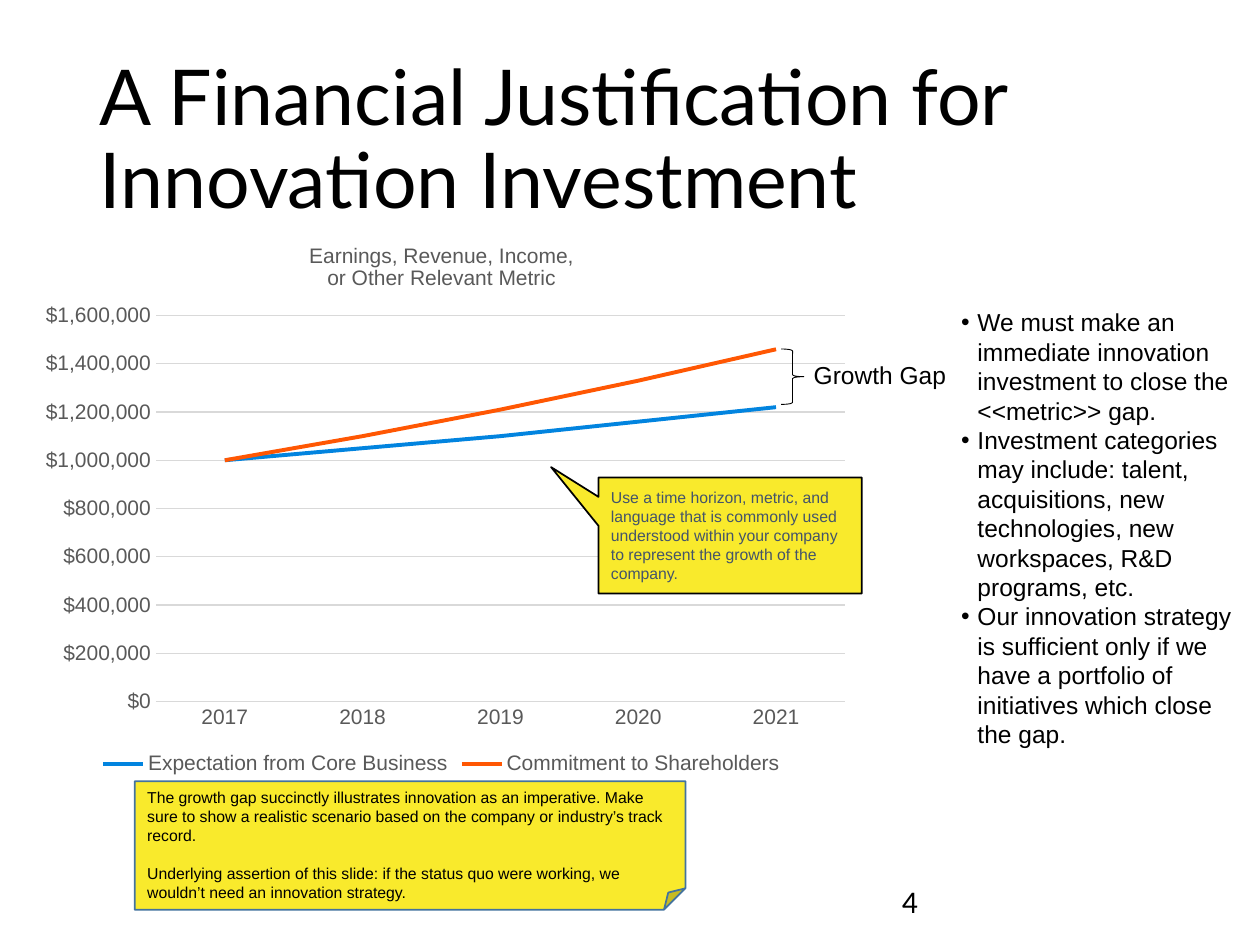
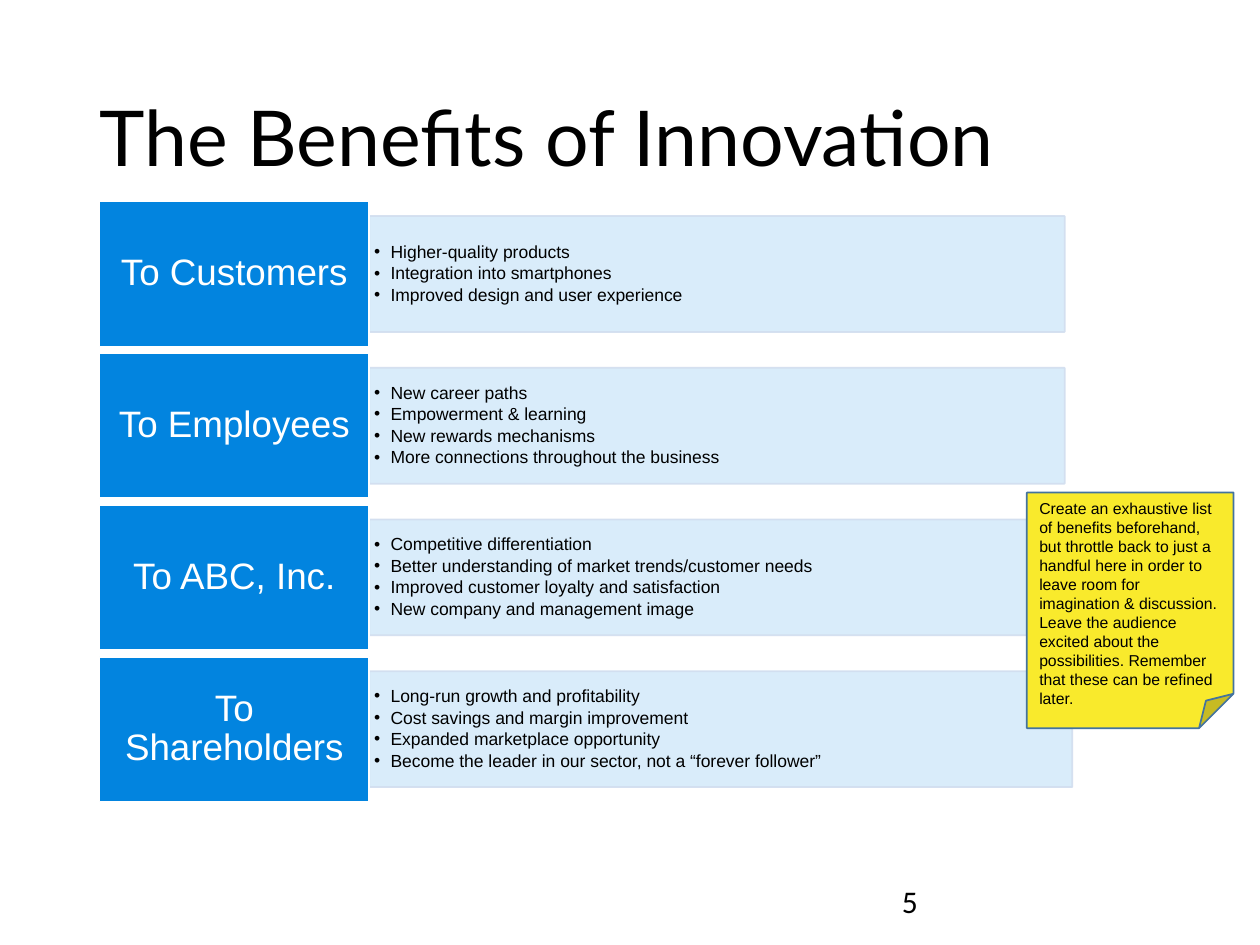
"""Builds two slides on the financial case for innovation and its benefits."""
from lxml.etree import SubElement
from pptx import Presentation
from pptx.chart.data import CategoryChartData
from pptx.dml.color import RGBColor
from pptx.enum.chart import XL_CHART_TYPE as Chart, XL_LEGEND_POSITION as Legend, XL_TICK_MARK as Tick
from pptx.enum.shapes import MSO_SHAPE as Shape
from pptx.enum.text import MSO_ANCHOR as Anchor, MSO_AUTO_SIZE as Fit, PP_ALIGN as Align
from pptx.oxml.ns import qn
from pptx.util import Inches, Pt

WIDTH, HEIGHT = 10, 7.5
BLUE, ORANGE, YELLOW = "0284DF", "FF5703", "F9EA2C"
BLACK, WHITE, GREY, SLATE = "000000", "FFFFFF", "595959", "44546A"
GRID, NOTE_EDGE, DETAIL_EDGE = "D9D9D9", "43739E", "D2DEEF"

TITLE_AREA = (0.69, 0.4, 8.62, 1.45)
NUMBER_AREA = (7.06, 6.95, 2.25, 0.4)
BULLET_INDENT = 0.13

GROWTH = {
    "title": "A Financial Justification for Innovation Investment",
    "number": "4",
    "metric": ["Earnings, Revenue, Income,", "or Other Relevant Metric"],
    "years": ["2017", "2018", "2019", "2020", "2021"],
    "series": [
        ("Expectation from Core Business", BLUE, [1000000, 1050000, 1100000, 1160000, 1220000]),
        ("Commitment to Shareholders", ORANGE, [1000000, 1100000, 1210000, 1330000, 1460000]),
    ],
    "gap": "Growth Gap",
    "actions": [
        "We must make an immediate innovation investment to close the <<metric>> gap.",
        "Investment categories may include: talent, acquisitions, new technologies, "
        "new workspaces, R&D programs, etc.",
        "Our innovation strategy is sufficient only if we have a portfolio of "
        "initiatives which close the gap.",
    ],
    "callout": "Use a time horizon, metric, and language that is commonly used understood "
               "within your company to represent the growth of the company.",
    "note": [
        "The growth gap succinctly illustrates innovation as an imperative. Make sure to show "
        "a realistic scenario based on the company or industry’s track record.",
        "Underlying assertion of this slide: if the status quo were working, "
        "we wouldn’t need an innovation strategy.",
    ],
}

BENEFITS = {
    "title": "The Benefits of Innovation",
    "number": "5",
    "groups": [
        ("To Customers", 5.52, ["Higher-quality products", "Integration into smartphones",
                                "Improved design and user experience"]),
        ("To Employees", 5.52, ["New career paths", "Empowerment & learning",
                                "New rewards mechanisms",
                                "More connections throughout the business"]),
        ("To ABC, Inc.", 5.52, ["Competitive differentiation",
                                "Better understanding of market trends/customer needs",
                                "Improved customer loyalty and satisfaction",
                                "New company and management image"]),
        ("To Shareholders", 5.58, ["Long-run growth and profitability",
                                   "Cost savings and margin improvement",
                                   "Expanded marketplace opportunity",
                                   "Become the leader in our sector, not a “forever follower”"]),
    ],
    "note": [
        "Create an exhaustive list of benefits beforehand, but throttle back to just a handful "
        "here in order to leave room for imagination & discussion. Leave the audience excited "
        "about the possibilities. Remember that these can be refined later.",
    ],
}


def rgb(code):
    """Turns a hex string into a colour."""
    return RGBColor.from_string(code)


def assign(target, values):
    """Sets each attribute named in a dict."""
    for name, value in values.items():
        setattr(target, name, value)


def box(area):
    """Turns an area in inches into slide lengths."""
    return [Inches(length) for length in area]


def style_font(font, size, color=BLACK, name="Arial"):
    """Gives a font its name, size and colour."""
    assign(font, {"name": name, "size": Pt(size)})
    font.color.rgb = rgb(color)


def set_alpha(color_format, percent):
    """Makes a solid fill partly transparent."""
    color = color_format._xPr.find(qn("a:solidFill"))[0]
    SubElement(color, qn("a:alpha"), val=str(percent * 1000))


def add_bullet(paragraph):
    """Adds a hanging bullet to a paragraph."""
    properties = paragraph._p.get_or_add_pPr()
    indent = Inches(BULLET_INDENT)
    properties.set("marL", str(indent))
    properties.set("indent", str(-indent))
    SubElement(properties, qn("a:buFont"), typeface="Arial")
    SubElement(properties, qn("a:buChar"), char="•")


def write(frame, lines, size, color=BLACK, name="Arial", bullets=False,
          anchor=Anchor.TOP, insets=(0.1, 0.05, 0.1, 0.05), gap=0, **layout):
    """Fills a text frame with one paragraph a line."""
    assign(frame, {"word_wrap": True, "auto_size": Fit.NONE, "vertical_anchor": anchor})
    sides = ("margin_left", "margin_top", "margin_right", "margin_bottom")
    assign(frame, dict(zip(sides, box(insets))))
    for index, line in enumerate(lines):
        paragraph = frame.paragraphs[0] if index == 0 else frame.add_paragraph()
        if bullets:
            add_bullet(paragraph)
        assign(paragraph, {"alignment": Align.LEFT, **layout})
        if index and gap:
            paragraph.space_before = Pt(gap)
        run = paragraph.add_run()
        run.text = line
        style_font(run.font, size, color, name)


def add_text(slide, area, lines, size, **style):
    """Adds a text box."""
    write(slide.shapes.add_textbox(*box(area)).text_frame, lines, size, **style)


def add_figure(slide, kind, area, fill, edge, weight=1):
    """Adds a preset shape with a flat fill and line."""
    figure = slide.shapes.add_shape(kind, *box(area))
    figure.shadow.inherit = False
    if fill:
        figure.fill.solid()
        figure.fill.fore_color.rgb = rgb(fill)
    else:
        figure.fill.background()
    figure.line.color.rgb = rgb(edge)
    figure.line.width = Pt(weight)
    return figure


def add_note(slide, area, lines):
    """Adds a yellow note with a folded corner."""
    add_figure(slide, Shape.FOLDED_CORNER, area, YELLOW, NOTE_EDGE)
    add_text(slide, area, lines, 9, gap=11)


def start_slide(deck, content):
    """Adds a slide with its title and number."""
    slide = deck.slides.add_slide(deck.slide_layouts[5])
    title = slide.shapes.title
    assign(title, dict(zip(("left", "top", "width", "height"), box(TITLE_AREA))))
    write(title.text_frame, [content["title"]], 44, name="Lato",
          anchor=Anchor.MIDDLE, line_spacing=0.9)
    add_text(slide, NUMBER_AREA, [content["number"]], 18, name="Calibri")
    return slide


def place_plot(chart, shares):
    """Fixes the inner plot area as shares of the chart."""
    plot_area = chart._chartSpace.chart.plotArea
    layout = plot_area.find(qn("c:layout"))
    if layout is None:
        layout = SubElement(plot_area, qn("c:layout"))
        plot_area.insert(0, layout)
    manual = SubElement(layout, qn("c:manualLayout"))
    settings = {"layoutTarget": "inner", "xMode": "edge", "yMode": "edge", **shares}
    for name, value in settings.items():
        SubElement(manual, qn(f"c:{name}"), val=str(value))


def add_growth_chart(slide, area):
    """Adds the line chart of expectation and commitment."""
    data = CategoryChartData()
    data.categories = GROWTH["years"]
    for name, _, values in GROWTH["series"]:
        data.add_series(name, values)
    chart = slide.shapes.add_chart(Chart.LINE, *box(area), data).chart
    style_font(chart.font, 12, GREY)

    heading = chart.chart_title.text_frame
    for index, line in enumerate(GROWTH["metric"]):
        paragraph = heading.paragraphs[0] if index == 0 else heading.add_paragraph()
        run = paragraph.add_run()
        run.text = line
        style_font(run.font, 12, GREY)
        run.font.bold = False

    chart.has_legend = True
    assign(chart.legend, {"position": Legend.BOTTOM, "include_in_layout": False})
    style_font(chart.legend.font, 12, GREY)

    years, dollars = chart.category_axis, chart.value_axis
    for axis in (years, dollars):
        assign(axis, {"major_tick_mark": Tick.NONE, "minor_tick_mark": Tick.NONE})
        style_font(axis.tick_labels.font, 12, GREY)
    assign(dollars, {"minimum_scale": 0, "maximum_scale": 1600000, "major_unit": 200000,
                     "has_major_gridlines": True})
    assign(dollars.tick_labels, {"number_format": '"$"#,##0', "number_format_is_linked": False})
    dollars.format.line.fill.background()
    for line in (years.format.line, dollars.major_gridlines.format.line):
        line.color.rgb = rgb(GRID)
        line.width = Pt(0.75)

    for series, (_, color, _) in zip(chart.plots[0].series, GROWTH["series"]):
        series.smooth = False
        series.format.line.color.rgb = rgb(color)
        series.format.line.width = Pt(2.25)
    place_plot(chart, {"x": 0.16, "y": 0.17, "w": 0.82, "h": 0.69})


def build_growth(deck):
    """Builds the slide on the growth gap."""
    slide = start_slide(deck, GROWTH)
    add_growth_chart(slide, (0.17, 1.75, 6.67, 4.44))
    add_figure(slide, Shape.RIGHT_BRACE, (6.2, 2.77, 0.18, 0.44), None, BLACK, 0.5)
    add_text(slide, (6.36, 2.81, 1.58, 0.34), [GROWTH["gap"]], 14)
    add_text(slide, (7.53, 2.39, 2.36, 3.87), GROWTH["actions"], 14, bullets=True)
    callout = add_figure(slide, Shape.RECTANGULAR_CALLOUT, (4.75, 3.79, 2.09, 0.92), YELLOW, BLACK)
    callout.adjustments[0], callout.adjustments[1] = -0.68, -0.59
    write(callout.text_frame, [GROWTH["callout"]], 9, color=SLATE, anchor=Anchor.MIDDLE)
    add_note(slide, (1.07, 6.2, 4.37, 1.02), GROWTH["note"])


def build_benefits(deck):
    """Builds the slide on who benefits."""
    slide = start_slide(deck, BENEFITS)
    left, top, label_width, label_height, pitch = 0.79, 1.6, 2.14, 1.15, 1.204
    detail_height = 0.8 * label_height
    for row, (audience, detail_width, gains) in enumerate(BENEFITS["groups"]):
        row_top = top + row * pitch
        detail_top = row_top + (label_height - detail_height) / 2
        detail = add_figure(slide, Shape.RECTANGLE,
                            (left + label_width, detail_top, detail_width, detail_height),
                            BLUE, DETAIL_EDGE)
        set_alpha(detail.fill, 15)
        set_alpha(detail.line.fill, 90)
        write(detail.text_frame, gains, 10, bullets=True, anchor=Anchor.MIDDLE,
              insets=(0.04, 0.07, 0.09, 0.07), line_spacing=0.9, space_after=Pt(1.5))
        label = add_figure(slide, Shape.RECTANGLE,
                           (left, row_top, label_width, label_height), BLUE, WHITE)
        write(label.text_frame, [audience], 21, color=WHITE, anchor=Anchor.MIDDLE,
              insets=(0.14, 0.1, 0.14, 0.1), alignment=Align.CENTER, line_spacing=0.9)
    add_note(slide, (8.15, 3.91, 1.64, 1.87), BENEFITS["note"])


def main():
    """Builds and saves the deck."""
    deck = Presentation()
    assign(deck, {"slide_width": Inches(WIDTH), "slide_height": Inches(HEIGHT)})
    build_growth(deck)
    build_benefits(deck)
    deck.save("out.pptx")


if __name__ == "__main__":
    main()
